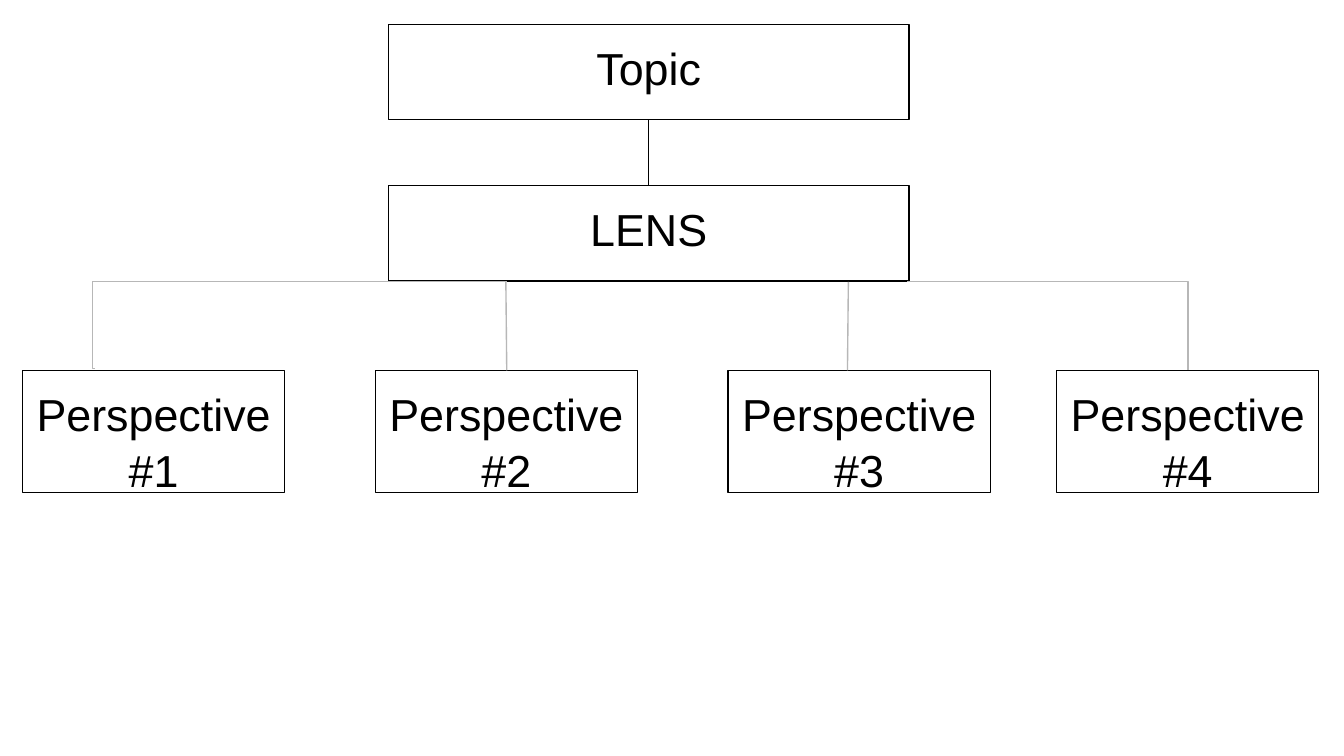
from pptx import Presentation
from pptx.dml.color import RGBColor
from pptx.enum.shapes import MSO_CONNECTOR, MSO_SHAPE
from pptx.enum.text import MSO_ANCHOR, PP_ALIGN
from pptx.oxml import parse_xml
from pptx.oxml.ns import nsdecls
from pptx.util import Pt

RECT = MSO_SHAPE.RECTANGLE
LINE, BENT = MSO_CONNECTOR.STRAIGHT, MSO_CONNECTOR.ELBOW
TOP, MIDST = MSO_ANCHOR.TOP, PP_ALIGN.CENTER
BLACK, GREY = "000000", "B7B7B7"

deck = Presentation()
deck.slide_width, deck.slide_height = Pt(720), Pt(405)
slide = deck.slides.add_slide(deck.slide_layouts[6])


def color(text):
    return RGBColor.from_string(text)


def link(kind, start, end, tint):
    wire = slide.shapes.add_connector(kind, *map(Pt, start + end))
    wire.line.color.rgb = color(tint)
    wire.line.width = Pt(0.75)
    wire._element.spPr.append(parse_xml(f"<a:effectLst {nsdecls('a')}/>"))
    return wire


frame = {"word_wrap": True, "vertical_anchor": TOP}
frame.update({f"margin_{side}": Pt(7.2) for side in ("left", "top", "right", "bottom")})
style = {"alignment": MIDST, "line_spacing": 1.05, "space_before": Pt(1.2)}
face = {"name": "Arial", "size": Pt(24)}

wide, small = (279, 51), (140.5, 65.5)
boxes = [("Topic", 208, 13, wide), ("LENS", 208, 99.5, wide)]
for num, left in enumerate((12, 201, 390, 566), 1):
    boxes.append((f"Perspective #{num}", left, 198.5, small))

for text, left, top, size in boxes:
    box = slide.shapes.add_shape(RECT, *map(Pt, (left, top) + size))
    box.shadow.inherit = False
    box.fill.background()
    box.line.color.rgb = color(BLACK)
    box.line.width = Pt(0.75)
    body = box.text_frame
    body.text = text
    para = body.paragraphs[0]
    for item, values in ((body, frame), (para, style), (para.font, face)):
        for key, value in values.items():
            setattr(item, key, value)
    para.font.color.rgb = color(BLACK)

link(LINE, (347.5, 64.5), (347.5, 99.5), BLACK)
link(LINE, (271, 151), (271.5, 198.5), GREY)
link(LINE, (454.5, 151), (454, 198.5), GREY)

# The left elbow turns just past its end; the right one has a single corner.
west = link(BENT, (271.5, 151), (51, 197.5), GREY)
west.adjustments = None
west._element.spPr.prstGeom.get_or_add_avLst().append(
    parse_xml(f'<a:gd {nsdecls("a")} name="adj1" fmla="val 100700"/>'))
east = link(BENT, (486, 151), (636.5, 198.5), GREY)
east._element.spPr.prstGeom.set("prst", "bentConnector2")

deck.save("out.pptx")
